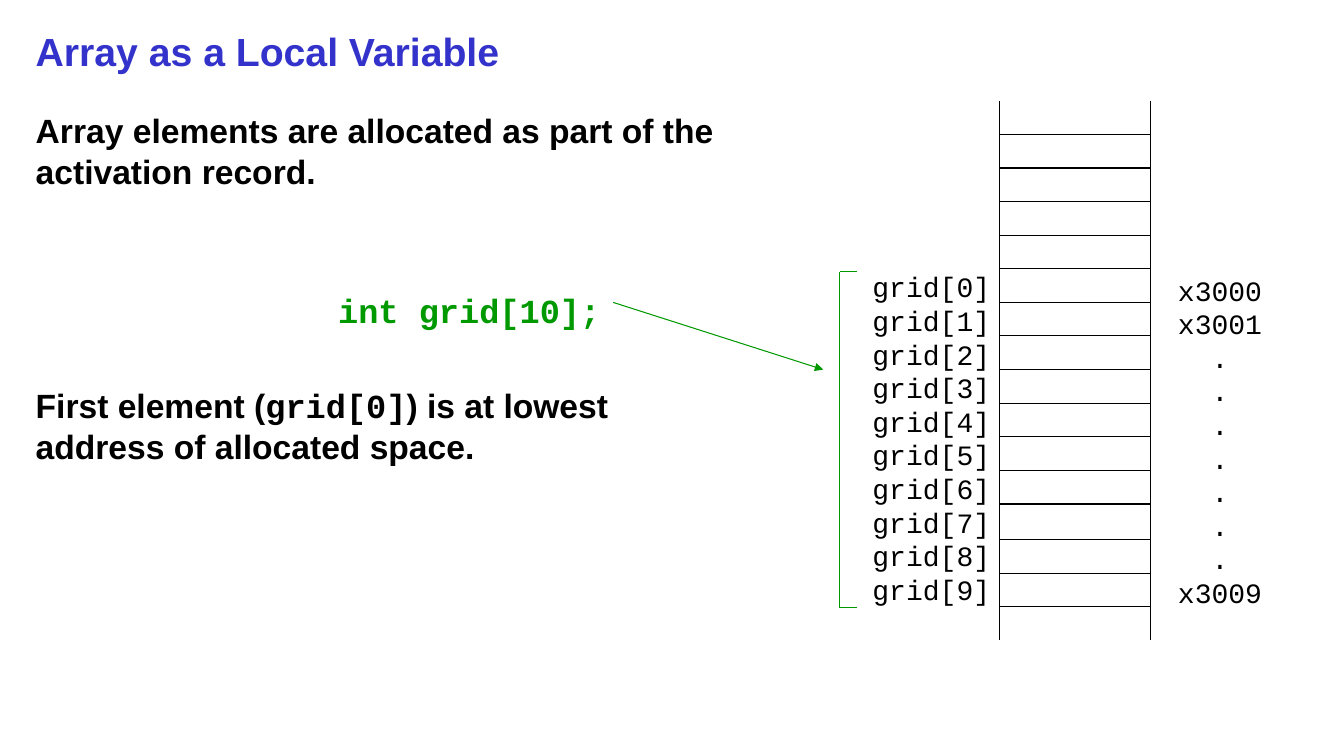
from lxml.etree import SubElement
from pptx import Presentation
from pptx.dml.color import RGBColor
from pptx.enum.shapes import MSO_CONNECTOR as Connector
from pptx.enum.text import MSO_ANCHOR as Anchor, PP_ALIGN as Align
from pptx.oxml.ns import qn
from pptx.util import Pt

PX = 9525
SANS, MONO = "Arial", "Courier New"
BLUE, GREEN, BLACK = "3333CC", "009900", "000000"
ROW = 32


def px(length):
    return int(length * PX)


def color(value):
    return RGBColor.from_string(value)


def add_line(page, x1, y1, x2, y2, stroke=BLACK, arrow=False):
    line = page.shapes.add_connector(
        Connector.STRAIGHT, px(x1), px(y1), px(x2), px(y2))
    line.line.color.rgb = color(stroke)
    line.line.width = Pt(0.75)
    properties = line._element.spPr
    if arrow:
        SubElement(properties.find(qn("a:ln")), qn("a:tailEnd"), type="triangle")
    SubElement(properties, qn("a:effectLst"))


def add_frame(page, left, top, width, height, anchor=Anchor.TOP):
    """Add a text box without insets and return its text frame."""
    box = page.shapes.add_textbox(px(left), px(top), px(width), px(height))
    frame = box.text_frame
    settings = dict(word_wrap=True, vertical_anchor=anchor, margin_left=0,
                    margin_right=0, margin_top=0, margin_bottom=0)
    for name, value in settings.items():
        setattr(frame, name, value)
    return frame


def add_para(frame, runs, size, fill=BLACK, bold=True, **layout):
    """Write (text, font) runs into the next paragraph of the frame."""
    first = frame.paragraphs[0]
    para = frame.add_paragraph() if first.runs else first
    for name, value in layout.items():
        setattr(para, name, value)
    for text, font_name in runs:
        run = para.add_run()
        run.text = text
        run.font.color.rgb = color(fill)
        for name, value in dict(name=font_name, size=Pt(size), bold=bold).items():
            setattr(run.font, name, value)
    return para


def add_title(page, left, top, width, height):
    frame = add_frame(page, left, top, width, height, Anchor.MIDDLE)
    add_para(frame, [("Array as a Local Variable", SANS)], 28, BLUE)


def add_body(page, left, top, width, height):
    frame = add_frame(page, left, top, width, height)
    add_para(frame, [("Array elements are allocated as part of the activation record.",
                      SANS)], 24, line_spacing=1.02)
    code = add_para(frame, [("int grid[10];", MONO)], 24, GREEN,
                    line_spacing=1.02, space_before=Pt(70))
    code._p.get_or_add_pPr().set("marL", str(px(288)))
    add_para(frame, [("First element (", SANS), ("grid[0]", MONO),
                     (") is at lowest address of allocated space.", SANS)],
             24, line_spacing=1.02, space_before=Pt(38))


def add_column(page, left, top, width, entries):
    """Write one centred entry per memory row."""
    frame = add_frame(page, left, top, width, ROW * len(entries))
    for entry in entries:
        add_para(frame, [(entry, MONO)], 20, bold=False,
                 alignment=Align.CENTER, line_spacing=Pt(24))


def add_memory(page, left, top, width, height):
    right = left + width
    for x in (left, right):
        add_line(page, x, top, x, top + height)
    for row in range(1, 16):
        shift = 2 if row > 12 else 0
        y = top + ROW * row + shift
        add_line(page, left, y, right, y)
    add_column(page, left - 131, top + 161, 132, [f"grid[{i}]" for i in range(10)])
    add_column(page, right + 16, top + 164, 100,
               ["x3000", "x3001"] + ["."] * 7 + ["x3009"])


def add_bracket(page, left, top, width, height):
    bottom = top + height
    add_line(page, left, top, left, bottom, GREEN)
    for y in (top, bottom):
        add_line(page, left, y, left + width, y, GREEN)


def main():
    deck = Presentation()
    deck.slide_width, deck.slide_height = px(1280), px(720)
    page = deck.slides.add_slide(deck.slide_layouts[6])
    add_title(page, 34, 20, 1196, 56)
    add_body(page, 34, 104, 660, 512)
    add_memory(page, 952, 96, 144, 514)
    add_bracket(page, 800, 259, 16, 320)
    add_line(page, 584, 288, 784, 352, GREEN, arrow=True)
    deck.save("out.pptx")


if __name__ == "__main__":
    main()
